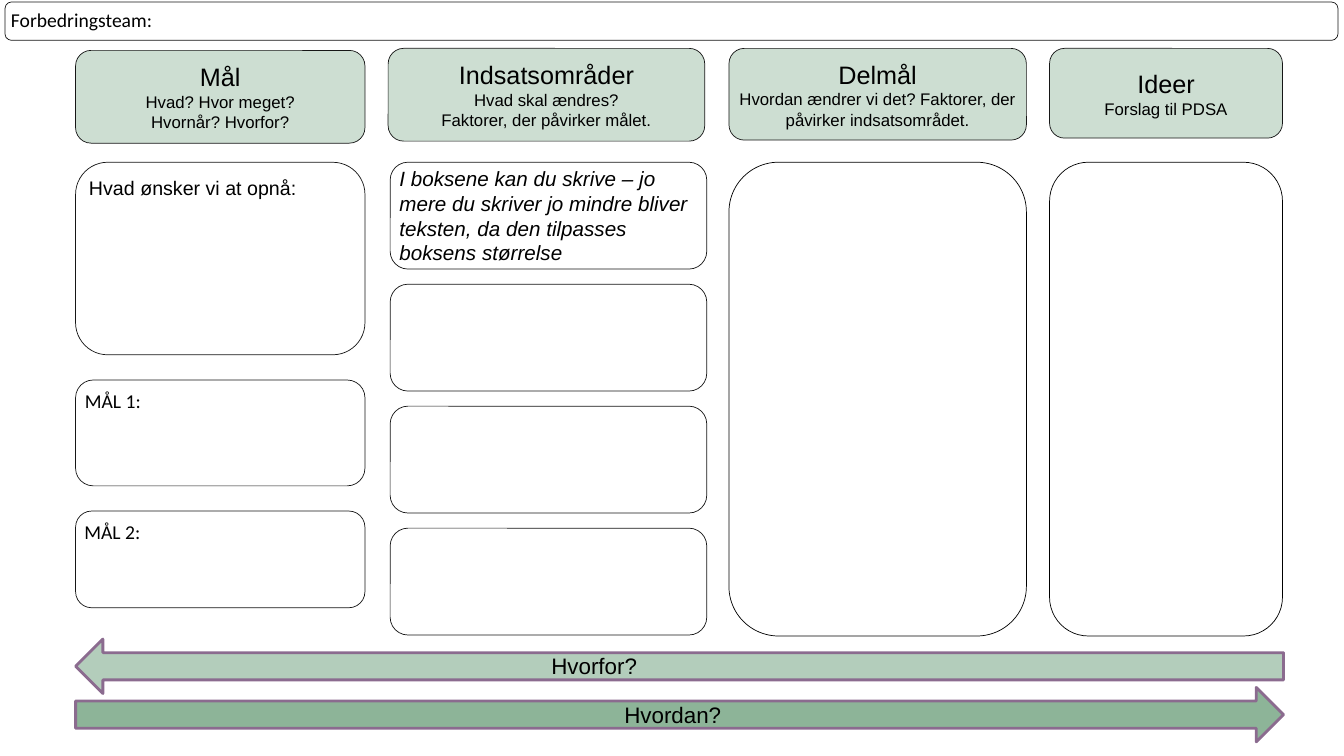
from dataclasses import dataclass

from pptx import Presentation
from pptx.dml.color import RGBColor
from pptx.enum.shapes import MSO_SHAPE
from pptx.enum.text import MSO_ANCHOR, PP_ALIGN
from pptx.util import Inches, Pt

BLACK, INK, WHITE = "000000", "161616", "FFFFFF"
HEADER_GREEN, HOW_GREEN, WHY_GREEN, PURPLE = "CDDED2", "8DB498", "B3CDBB", "8B6B8F"
BODY_TOP, BODY_HEIGHT = 1.61, 4.7
BOX_PITCH = 1.21


@dataclass
class Line:
    text: str
    size: float
    font: str = "Arial"
    italic: bool = False


@dataclass
class Box:
    left: float
    top: float
    width: float
    height: float
    lines: tuple[Line, ...] = ()
    fill: str | None = None
    border: str = INK
    border_width: float = 0.5
    preset: MSO_SHAPE = MSO_SHAPE.ROUNDED_RECTANGLE
    align: PP_ALIGN = PP_ALIGN.LEFT
    anchor: MSO_ANCHOR = MSO_ANCHOR.TOP
    inset: float = 0.04
    rotation: float = 0


def rgb(colour: str) -> RGBColor:
    return RGBColor.from_string(colour)


def write_lines(frame, lines: tuple[Line, ...], align: PP_ALIGN) -> None:
    for index, line in enumerate(lines):
        paragraph = frame.add_paragraph() if index else frame.paragraphs[0]
        paragraph.alignment = align
        run = paragraph.add_run()
        run.text = line.text
        run.font.size = Pt(line.size)
        run.font.name = line.font
        run.font.italic = line.italic
        run.font.color.rgb = rgb(BLACK)


def draw_box(slide, box: Box) -> None:
    shape = slide.shapes.add_shape(box.preset, Inches(box.left), Inches(box.top),
                                   Inches(box.width), Inches(box.height))
    shape.shadow.inherit = False
    shape.rotation = box.rotation
    if box.fill:
        shape.fill.solid()
        shape.fill.fore_color.rgb = rgb(box.fill)
    else:
        shape.fill.background()
    shape.line.color.rgb = rgb(box.border)
    shape.line.width = Pt(box.border_width)
    frame = shape.text_frame
    frame.word_wrap = True
    frame.vertical_anchor = box.anchor
    frame.margin_left = frame.margin_right = Inches(box.inset)
    frame.margin_top = frame.margin_bottom = Inches(box.inset)
    write_lines(frame, box.lines, box.align)


def header(left: float, top: float, width: float, height: float,
           heading: str, *details: str) -> Box:
    lines = (Line(heading, 18), *(Line(detail, 12) for detail in details))
    return Box(left, top, width, height, lines, HEADER_GREEN,
               align=PP_ALIGN.CENTER, anchor=MSO_ANCHOR.MIDDLE)


def arrow(top: float, fill: str, lines: tuple[Line, ...] = (), rotation: float = 0) -> Box:
    return Box(0.75, top, 11.98, 0.54, lines, fill, PURPLE, 2, MSO_SHAPE.RIGHT_ARROW,
               PP_ALIGN.CENTER, MSO_ANCHOR.MIDDLE, 0.05, rotation)


def main() -> None:
    deck = Presentation()
    deck.slide_width, deck.slide_height = Inches(13.33), Inches(7.5)
    slide = deck.slides.add_slide(deck.slide_layouts[6])

    # Team and column headers
    team = Box(0.05, 0.02, 13.22, 0.38, (Line("Forbedringsteam:", 14, "Calibri"),))
    headers = [
        header(0.75, 0.5, 2.87, 0.92, "Mål", "Hvad? Hvor meget?", "Hvornår? Hvorfor?"),
        header(3.85, 0.48, 3.14, 0.92, "Indsatsområder", "Hvad skal ændres?",
               "Faktorer, der påvirker målet."),
        header(7.23, 0.48, 2.95, 0.91, "Delmål",
               "Hvordan ændrer vi det? Faktorer, der påvirker indsatsområdet."),
        header(10.41, 0.48, 2.31, 0.89, "Ideer", "Forslag til PDSA"),
    ]

    # Goals
    goals = [
        Box(0.75, BODY_TOP, 2.87, 1.91, (Line("Hvad ønsker vi at opnå:", 14),)),
        Box(0.75, 3.77, 2.87, 1.05, (Line("MÅL 1:", 14, "Calibri"),)),
        Box(0.75, 5.07, 2.87, 0.96, (Line("MÅL 2:", 14, "Calibri"),)),
    ]

    # Focus areas, the first with guidance
    guidance = Line("I boksene kan du skrive – jo mere du skriver jo mindre bliver teksten, "
                    "da den tilpasses boksens størrelse", 14.7, italic=True)
    focus_areas = [
        Box(3.87, BODY_TOP + row * BOX_PITCH, 3.14, 1.06, () if row else (guidance,),
            WHITE, anchor=MSO_ANCHOR.MIDDLE)
        for row in range(4)
    ]

    # Subgoals and ideas
    open_columns = [Box(left, BODY_TOP, width, BODY_HEIGHT, fill=WHITE, border=BLACK)
                    for left, width in ((7.23, 2.95), (10.41, 2.31))]

    # How and why arrows
    arrows = [arrow(6.82, HOW_GREEN, (Line("Hvordan?", 16),)),
              arrow(6.34, WHY_GREEN, rotation=180)]

    for box in [team, *headers, *goals, *focus_areas, *open_columns, *arrows]:
        draw_box(slide, box)

    why_label = slide.shapes.add_textbox(Inches(5.37), Inches(6.42), Inches(2.49), Inches(0.37))
    why_label.text_frame.word_wrap = True
    write_lines(why_label.text_frame, (Line("Hvorfor?", 16),), PP_ALIGN.LEFT)

    deck.save("out.pptx")


if __name__ == "__main__":
    main()
